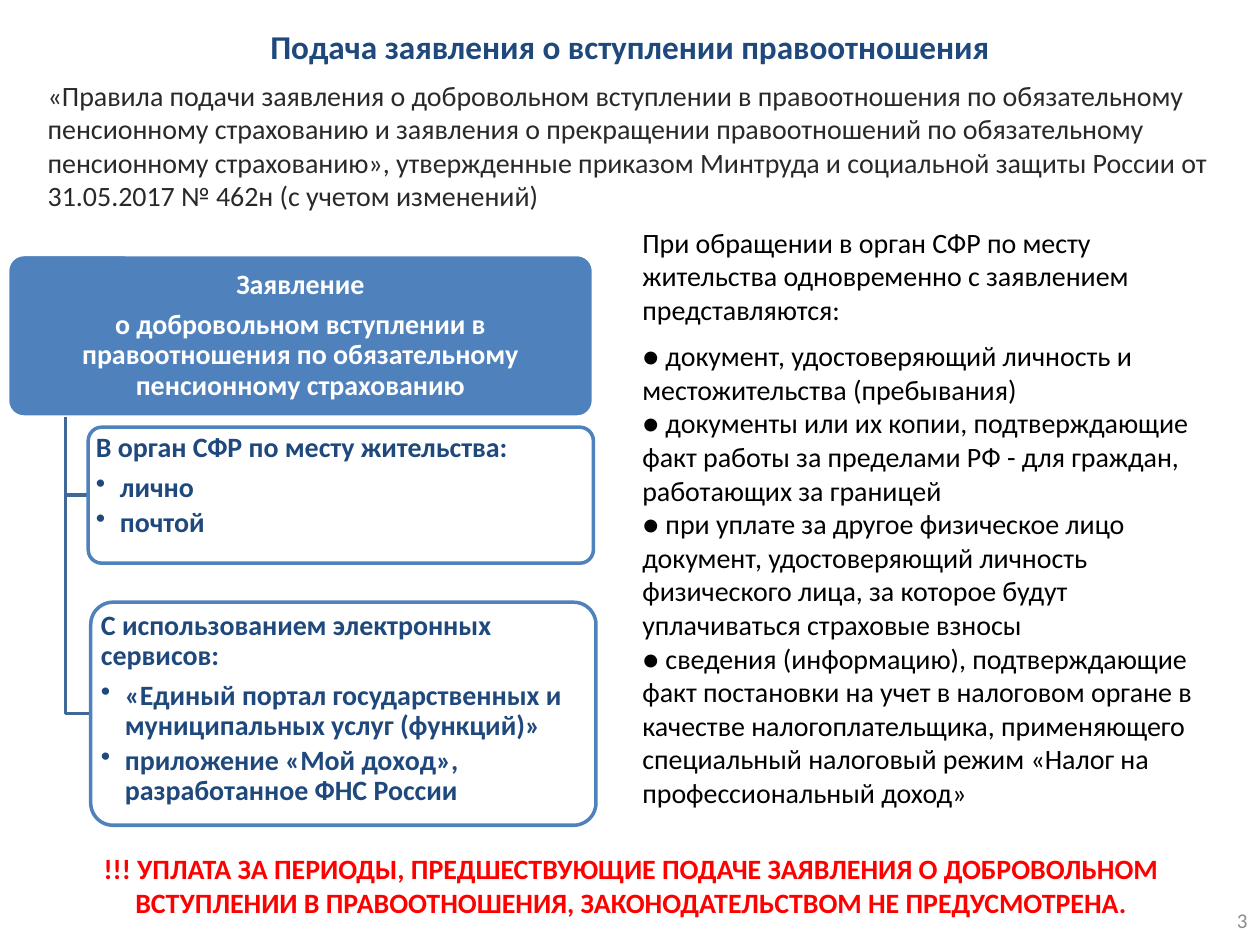
from dataclasses import dataclass

from lxml import etree
from pptx import Presentation, util as u
from pptx.dml.color import RGBColor
from pptx.enum import shapes, text
from pptx.oxml.ns import qn

NAVY = RGBColor(0x1F, 0x49, 0x7D)
BLUE = RGBColor(0x4F, 0x81, 0xBD)
BRANCH = RGBColor(0x3F, 0x67, 0x97)
WHITE = RGBColor(0xFF, 0xFF, 0xFF)
BLACK = RGBColor(0, 0, 0)
CHARCOAL = RGBColor(0x29, 0x29, 0x29)
GRAY = RGBColor(0x8C, 0x8C, 0x8C)
RED = RGBColor(0xFF, 0, 0)

FONT = "Calibri"
CELL = u.Inches(0.1)  # the slide is a grid of 100 columns and 75 rows
COLUMNS, ROWS = 100, 75
CENTER, RIGHT = text.PP_ALIGN.CENTER, text.PP_ALIGN.RIGHT
MIDDLE = text.MSO_ANCHOR.MIDDLE


@dataclass
class Box:
    """A region in grid columns and rows."""
    left: float
    top: float
    width: float
    height: float

    def place(self):
        return [cells(n) for n in (self.left, self.top, self.width, self.height)]


def cells(count):
    return u.Emu(round(count * CELL))


def write(frame, lines, size=16, color=BLACK, bold=False, align=None,
          spacing=None, after=0, bullet=False):
    """Append paragraphs to a text frame, filling its empty first one."""
    for line in lines:
        paragraph = frame.paragraphs[0]
        if paragraph.runs:
            paragraph = frame.add_paragraph()
        paragraph.alignment = align or text.PP_ALIGN.LEFT
        paragraph.line_spacing = spacing
        paragraph.space_after = u.Pt(after)
        run = paragraph.add_run()
        run.text = line
        run.font.name, run.font.size, run.font.bold = FONT, u.Pt(size), bold
        run.font.color.rgb = color
        if bullet:
            properties = paragraph._p.get_or_add_pPr()
            indent = u.Inches(0.19)
            properties.set("marL", str(indent))
            properties.set("indent", str(-indent))
            etree.SubElement(properties, qn("a:buChar"), char="•")


def text_block(slide, box, lines, anchor=text.MSO_ANCHOR.TOP, **style):
    frame = slide.shapes.add_textbox(*box.place()).text_frame
    frame.word_wrap = True
    frame.vertical_anchor = anchor
    write(frame, lines, **style)


def card(slide, box, fill, line, anchor):
    """Draw a rounded card and return its text frame."""
    shape = slide.shapes.add_shape(
        shapes.MSO_SHAPE.ROUNDED_RECTANGLE, *box.place())
    shape.adjustments[0] = 0.1
    shape.shadow.inherit = False
    shape.fill.solid()
    shape.fill.fore_color.rgb = fill
    shape.line.color.rgb = line
    shape.line.width = u.Pt(2)
    frame = shape.text_frame
    frame.word_wrap = True
    frame.vertical_anchor = anchor
    frame.margin_left = frame.margin_right = u.Inches(0.03)
    frame.margin_top = frame.margin_bottom = u.Inches(0.02)
    return frame


def branch(slide, parent, child):
    """Draw the elbow from the parent's lower edge to the child's left side."""
    trunk = parent.left + 4.6
    start = parent.top + parent.height
    level = child.top + child.height / 2
    builder = slide.shapes.build_freeform(cells(trunk), cells(start))
    builder.add_line_segments(
        [(cells(trunk), cells(level)), (cells(child.left), cells(level))],
        close=False)
    elbow = builder.convert_to_shape()
    elbow.shadow.inherit = False
    elbow.fill.background()
    elbow.line.color.rgb = BRANCH
    elbow.line.width = u.Pt(2)


def application_tree(slide, box, heading, channels):
    """Place the application card and the ways of submitting it."""
    parent = Box(box.left, box.top, box.width - 0.2, 12.9)
    write(card(slide, parent, BLUE, WHITE, MIDDLE), heading, color=WHITE,
          bold=True, align=CENTER, spacing=0.9, after=5.6)
    for shift, drop, height, title, options in channels:
        child = Box(box.left + shift, box.top + drop, 40.1, height)
        branch(slide, parent, child)
        frame = card(slide, child, WHITE, BLUE, text.MSO_ANCHOR.TOP)
        style = dict(color=NAVY, bold=True, spacing=0.9)
        write(frame, [title], after=5.6, **style)
        write(frame, options, after=2.4, bullet=True, **style)


def required_documents(slide, box, intro, documents):
    intro_rows = 9
    text_block(slide, Box(box.left, box.top, box.width, intro_rows), [intro])
    text_block(slide, Box(box.left, box.top + intro_rows, box.width,
                          box.height - intro_rows),
               [f"● {document}" for document in documents])


def header(slide, box, title, rules):
    text_block(slide, Box(box.left + 2.7, box.top, 89, 4.7), [title],
               anchor=MIDDLE, size=19, color=NAVY, bold=True, align=CENTER)
    text_block(slide, Box(box.left, box.top + 4.4, box.width, 11.8), [rules],
               color=CHARCOAL)


def footer(slide, box, warning, number):
    text_block(slide, Box(box.left, box.top, 96.2, 6.4), [warning],
               color=RED, bold=True, align=CENTER)
    text_block(slide, Box(box.left + box.width - 23.3, box.top + 3.9, 23.3, 4),
               [number], anchor=MIDDLE, size=12, color=GRAY, align=RIGHT)


def main():
    deck = Presentation()
    deck.slide_width, deck.slide_height = cells(COLUMNS), cells(ROWS)
    slide = deck.slides.add_slide(deck.slide_layouts[6])

    application_tree(
        slide, Box(0.6, 20.2, 46.7, 45.3),
        ["Заявление",
         "о добровольном вступлении в правоотношения по обязательному "
         "пенсионному страхованию"],
        [(6.4, 13.7, 10.8, "В орган СФР по месту жительства:",
          ["лично", "почтой"]),
         (6.6, 27.6, 17.7, "С использованием электронных сервисов:",
          ["«Единый портал государственных и муниципальных услуг (функций)»",
           "приложение «Мой доход», разработанное ФНС России"])])
    header(
        slide, Box(2.8, 1.3, 94.9, 16.2),
        "Подача заявления о вступлении правоотношения",
        "«Правила подачи заявления о добровольном вступлении в "
        "правоотношения по обязательному пенсионному страхованию и заявления "
        "о прекращении правоотношений по обязательному пенсионному "
        "страхованию», утвержденные приказом Минтруда и социальной защиты "
        "России от 31.05.2017 № 462н (с учетом изменений)")
    required_documents(
        slide, Box(50, 17.4, 47.7, 47.7),
        "При обращении в орган СФР по месту жительства одновременно с "
        "заявлением представляются:",
        ["документ, удостоверяющий личность и местожительства (пребывания)",
         "документы или их копии, подтверждающие факт работы за пределами "
         "РФ - для граждан, работающих за границей",
         "при уплате за другое физическое лицо документ, удостоверяющий "
         "личность физического лица, за которое будут уплачиваться страховые "
         "взносы",
         "сведения (информацию), подтверждающие факт постановки на учет в "
         "налоговом органе в качестве налогоплательщика, применяющего "
         "специальный налоговый режим «Налог на профессиональный доход»"])
    footer(
        slide, Box(2, 67.1, 98, 7.9),
        "!!! УПЛАТА ЗА ПЕРИОДЫ, ПРЕДШЕСТВУЮЩИЕ ПОДАЧЕ ЗАЯВЛЕНИЯ О "
        "ДОБРОВОЛЬНОМ ВСТУПЛЕНИИ В ПРАВООТНОШЕНИЯ, ЗАКОНОДАТЕЛЬСТВОМ НЕ "
        "ПРЕДУСМОТРЕНА.",
        "3")
    deck.save("out.pptx")


if __name__ == "__main__":
    main()
